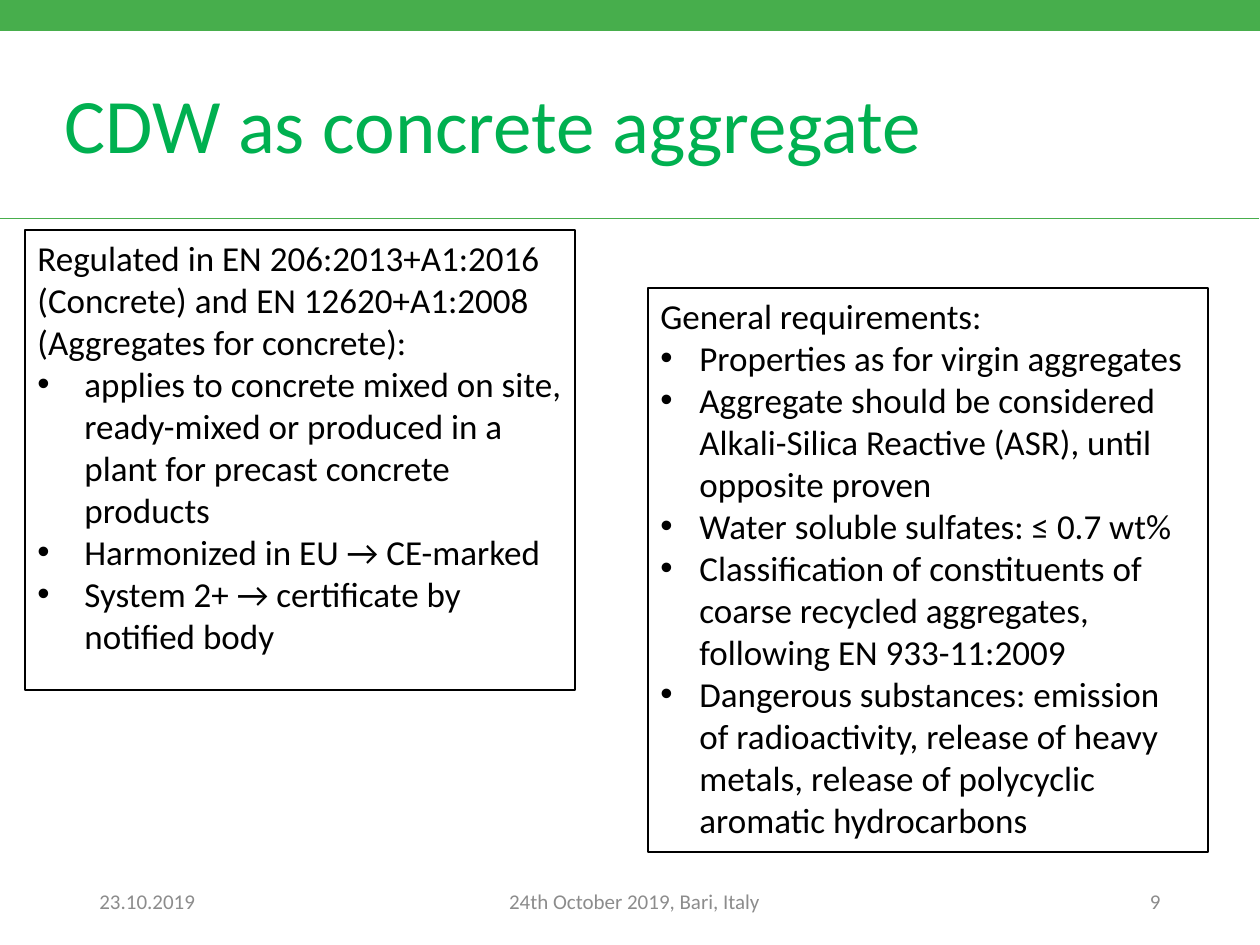
import pptx
import pptx.util
import pptx.enum.shapes
import pptx.enum.text
import pptx.dml.color
import lxml.etree
import pptx.oxml.ns

PX = pptx.util.Inches(1) / 126
COLORS = {"band": "47AE4C", "title": "00B050", "body": "000000", "footer": "8C8C8C"}
ALIGN = pptx.enum.text.PP_ALIGN
ANCHOR = pptx.enum.text.MSO_ANCHOR
RECTANGLE = pptx.enum.shapes.MSO_SHAPE.RECTANGLE


def emu(*lengths):
    return [round(length * PX) for length in lengths]


def add_text(box, lines, size, color, anchor, align=ALIGN.LEFT, indent=0, spacing=1.0):
    """Add a text box; with an indent, every line after the first is bulleted."""
    frame = slide.shapes.add_textbox(*emu(*box)).text_frame
    frame_format = {"word_wrap": True, "vertical_anchor": anchor}
    for name, value in frame_format.items():
        setattr(frame, name, value)
    for number, line in enumerate(lines):
        paragraph = frame.add_paragraph() if number else frame.paragraphs[0]
        if indent and number:
            properties = paragraph._p.get_or_add_pPr()
            hang = emu(indent)[0]
            properties.set("marL", str(hang))
            properties.set("indent", str(-hang))
            font = lxml.etree.SubElement(properties, pptx.oxml.ns.qn("a:buFont"))
            font.set("typeface", "Arial")
            bullet = lxml.etree.SubElement(properties, pptx.oxml.ns.qn("a:buChar"))
            bullet.set("char", "•")
        paragraph.alignment = align
        paragraph.line_spacing = spacing
        run = paragraph.add_run()
        run.text = line
        for name, value in {"name": "Calibri", "size": pptx.util.Pt(size)}.items():
            setattr(run.font, name, value)
        run.font.color.rgb = pptx.dml.color.RGBColor.from_string(COLORS[color])


presentation = pptx.Presentation()
presentation.slide_width, presentation.slide_height = emu(1260, 945)
slide = presentation.slides.add_slide(presentation.slide_layouts[6])

# Header band and rule
band = slide.shapes.add_shape(RECTANGLE, *emu(0, 0, 1260, 31))
band.shadow.inherit = False
band.fill.solid()
band.fill.fore_color.rgb = pptx.dml.color.RGBColor.from_string(COLORS["band"])
band.line.fill.background()

rule = slide.shapes.add_connector(
    pptx.enum.shapes.MSO_CONNECTOR.STRAIGHT, *emu(-1, 218, 1259, 218))
rule.line.color.rgb = pptx.dml.color.RGBColor.from_string(COLORS["band"])
rule.line.width = pptx.util.Pt(0.5)
lxml.etree.SubElement(rule._element.spPr, pptx.oxml.ns.qn("a:effectLst"))

add_text((52, 50, 1123, 158), ["CDW as concrete aggregate"], 44, "title",
         ANCHOR.MIDDLE, spacing=0.9)

# Footer
footer = [
    (87, 141, "23.10.2019", ALIGN.LEFT),
    (1050, 123, "9", ALIGN.RIGHT),
    (417, 435, "24th October 2019, Bari, Italy", ALIGN.CENTER),
]
for left, width, text, align in footer:
    add_text((left, 876, width, 50), [text], 12, "footer", ANCHOR.MIDDLE, align)

# Framed lists: text box, frame height, bullet indent, lines
panels = [
    ((25, 230, 550, 437), 460, 47, [
        "Regulated in EN 206:2013+A1:2016 (Concrete) and EN 12620+A1:2008 "
        "(Aggregates for concrete):",
        "applies to concrete mixed on site, ready-mixed or produced in a plant "
        "for precast concrete products",
        "Harmonized in EU → CE-marked",
        "System 2+ → certificate by notified body",
    ]),
    ((648, 288, 560, 564), 564, 39, [
        "General requirements:",
        "Properties as for virgin aggregates",
        "Aggregate should be considered Alkali-Silica Reactive (ASR), until "
        "opposite proven",
        "Water soluble sulfates: ≤ 0.7 wt%",
        "Classification of constituents of coarse recycled aggregates, "
        "following EN 933-11:2009",
        "Dangerous substances: emission of radioactivity, release of heavy "
        "metals, release of polycyclic aromatic hydrocarbons",
    ]),
]
for box, frame_height, indent, lines in panels:
    add_text(box, lines, 20, "body", ANCHOR.TOP, indent=indent)
    border = slide.shapes.add_shape(RECTANGLE, *emu(*box[:3], frame_height))
    border.shadow.inherit = False
    border.fill.background()
    border.line.color.rgb = pptx.dml.color.RGBColor.from_string(COLORS["body"])
    border.line.width = pptx.util.Pt(1)

presentation.save("out.pptx")
